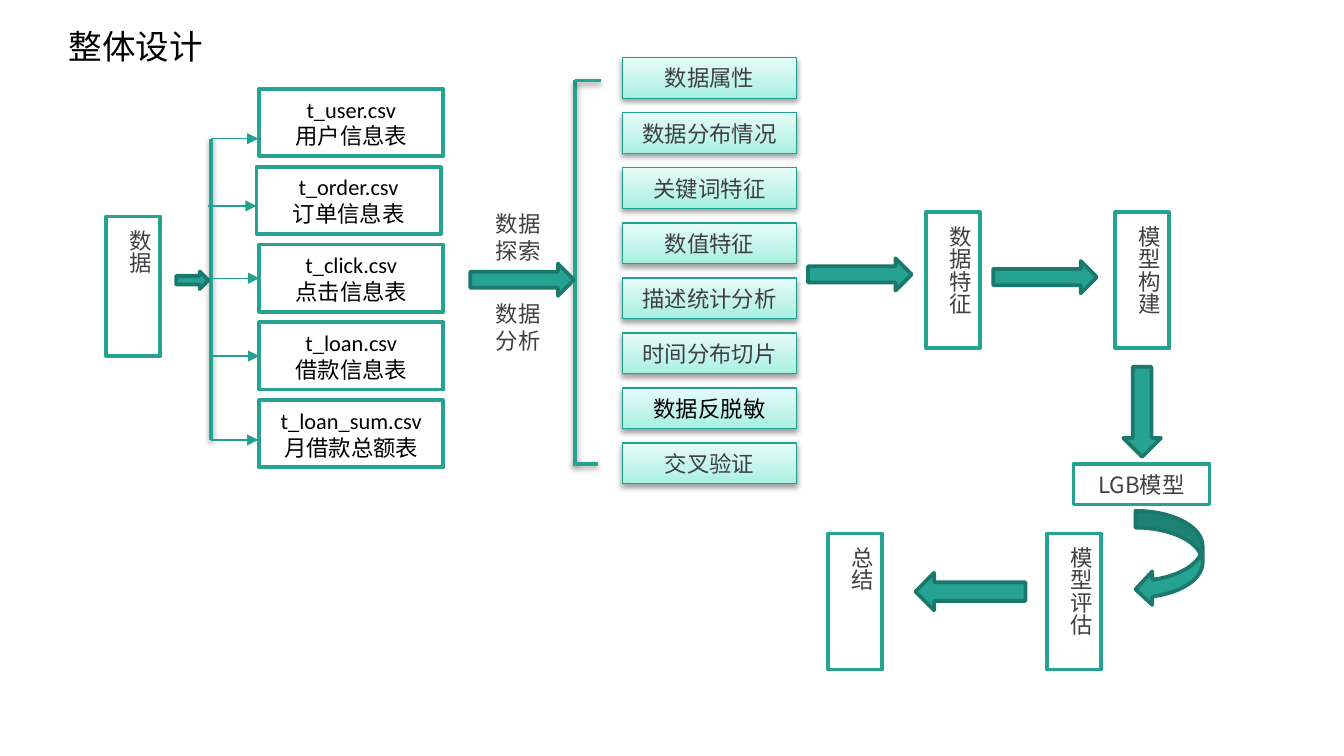
from typing import NamedTuple

from lxml import etree
from pptx import Presentation
from pptx.dml.color import RGBColor
from pptx.enum.shapes import MSO_CONNECTOR, MSO_SHAPE
from pptx.enum.text import MSO_ANCHOR, PP_ALIGN
from pptx.oxml.ns import qn
from pptx.util import Cm, Pt

RECT = MSO_SHAPE.RECTANGLE
RIGHT = MSO_SHAPE.RIGHT_ARROW
LEFT = MSO_SHAPE.LEFT_ARROW
DOWN = MSO_SHAPE.DOWN_ARROW
CURVE = MSO_SHAPE.CURVED_LEFT_ARROW
STRAIGHT = MSO_CONNECTOR.STRAIGHT
MIDDLE = MSO_ANCHOR.MIDDLE
TOP = MSO_ANCHOR.TOP
CENTER = PP_ALIGN.CENTER
START = PP_ALIGN.LEFT

HEX = {"white": "FFFFFF", "black": "000000", "gray": "404040",
       "teal": "25A292", "thin": "21A191", "dark": "1B786C"}
FADE = ((0, "A4F1E1"), (35, "C0F4E9"), (100, "E6FCF7"))
NOTO = "Noto Sans CJK SC"
CALIBRI = "Calibri"


class Box(NamedTuple):
    x: float
    y: float
    w: float
    h: float


class Arrow(NamedTuple):
    kind: MSO_SHAPE
    box: Box


class Step(NamedTuple):
    text: str
    box: Box


class Branch(NamedTuple):
    text: str
    left: float   # left side of the card
    start: float  # where the arrow leaves the spine
    end: float
    y: float


def color(name: str) -> RGBColor:
    return RGBColor.from_string(HEX[name])


def add(parent, tag: str, **attrs):
    return etree.SubElement(parent, qn(tag), attrs)


def shade(effects) -> None:
    """Soft shadow straight below."""
    drop = add(effects, "a:outerShdw", blurRad="40000", dist="20000",
               dir="5400000", rotWithShape="0")
    add(add(drop, "a:srgbClr", val=HEX["black"]), "a:alpha", val="38000")


def blend(shape) -> None:
    """Three-stop fill, lightest at the top."""
    shape.fill.gradient()
    grad = shape._element.spPr.find(qn("a:gradFill"))
    for child in list(grad):
        grad.remove(child)
    stops = add(grad, "a:gsLst")
    for pos, tone in FADE:
        add(add(stops, "a:gs", pos=str(pos * 1000)), "a:srgbClr", val=tone)
    add(grad, "a:lin", ang="16200000", scaled="0")


def write(shape, text: str, tone: str = "gray", font: str = NOTO,
          size: int = 12, align=CENTER, pitch: float = 0) -> None:
    frame = shape.text_frame
    frame.text = text
    frame.word_wrap = True
    frame.vertical_anchor = MIDDLE
    for para in frame.paragraphs:
        para.alignment = align
        if pitch:
            para.line_spacing = Pt(pitch)
        for run in para.runs:
            run.font.size = Pt(size)
            run.font.color.rgb = color(tone)
            run.font.name = font
            add(run._r.get_or_add_rPr(), "a:ea", typeface=NOTO)


def block(slide, kind, box: Box, fill: str = "white", line: str = "teal",
          width: float = 2):
    shape = slide.shapes.add_shape(kind, *map(Cm, box))
    shape.shadow.inherit = False
    shape.fill.solid()
    shape.fill.fore_color.rgb = color(fill)
    shape.line.color.rgb = color(line)
    shape.line.width = Pt(width)
    return shape


def stand(slide, step: Step) -> None:
    """Box whose text runs from top to bottom."""
    shape = block(slide, RECT, step.box)
    write(shape, step.text, align=START)
    frame = shape.text_frame
    frame.vertical_anchor = TOP
    frame.margin_top = Cm(0.25)
    frame.margin_right = Cm(0.13)
    frame._txBody.bodyPr.set("vert", "eaVert")


def chip(slide, text: str, box: Box, tone: str) -> None:
    shape = block(slide, RECT, box, line="thin", width=0.75)
    blend(shape)
    shade(shape._element.spPr.find(qn("a:effectLst")))
    write(shape, text, tone)


def rule(slide, x1: float, y1: float, x2: float, y2: float,
         head: bool = False):
    """Thick shadowed line, or a thin one with an arrowhead."""
    line = slide.shapes.add_connector(STRAIGHT, Cm(x1), Cm(y1), Cm(x2), Cm(y2))
    line.line.color.rgb = color("thin" if head else "teal")
    line.line.width = Pt(0.75 if head else 2)
    effects = add(line._element.spPr, "a:effectLst")
    if head:
        add(line.line._get_or_add_ln(), "a:tailEnd", type="triangle")
    else:
        shade(effects)
    return line


BRANCHES = (
    Branch("t_user.csv\n用户信息表", 4.9, 3.99, 4.88, 2.62),
    Branch("t_order.csv\n订单信息表", 4.85, 3.94, 4.85, 3.89),
    Branch("t_click.csv\n点击信息表", 4.9, 3.91, 4.83, 5.28),
    Branch("t_loan.csv\n借款信息表", 4.9, 4.01, 4.93, 6.76),
    Branch("t_loan_sum.csv月借款总额表", 4.9, 3.99, 4.88, 8.31),
)
CHIPS = ("数据属性", "数据分布情况", "关键词特征", "数值特征",
         "描述统计分析", "时间分布切片", "数据反脱敏", "交叉验证")
STEPS = (
    Step("数据", Box(2.01, 4.09, 1.02, 2.64)),
    Step("数据特征", Box(17.5, 4.01, 1.02, 2.57)),
    Step("模型构建", Box(21.08, 4.01, 1.02, 2.57)),
    Step("模型评估", Box(19.79, 10.08, 1.02, 2.57)),
    Step("总结", Box(15.65, 10.08, 1.02, 2.57)),
)
ARROWS = (
    Arrow(RIGHT, Box(3.33, 5.13, 0.61, 0.33)),
    Arrow(RIGHT, Box(8.89, 4.98, 1.96, 0.61)),
    Arrow(RIGHT, Box(15.27, 4.88, 1.96, 0.61)),
    Arrow(RIGHT, Box(18.77, 4.93, 1.96, 0.61)),
    Arrow(DOWN, Box(21.23, 6.93, 0.71, 1.7)),
    Arrow(CURVE, Box(21.46, 9.65, 1.27, 1.8)),
    Arrow(LEFT, Box(17.3, 10.82, 2.08, 0.71)),
)


def main() -> None:
    deck = Presentation()
    deck.slide_width, deck.slide_height = Cm(25.4), Cm(14.28)
    slide = deck.slides.add_slide(deck.slide_layouts[5])

    # Title
    title = slide.shapes.title
    title.left, title.top, title.width, title.height = map(
        Cm, (1.3, 0.33, 5.92, 1.07))
    write(title, "整体设计", "black", size=18, align=START)
    title.text_frame.margin_left = title.text_frame.margin_right = 0

    # Source tables and the spine that feeds them
    rule(slide, 3.99, 2.62, 3.99, 8.31)
    high = 1.27
    for i, item in enumerate(BRANCHES):
        top = 1.68 + 1.47 * i
        card = block(slide, RECT, Box(item.left, top, 3.48, high))
        write(card, item.text, "black", CALIBRI, pitch=14.4)
        mid = top + high / 2
        join = abs(item.y - mid) < 0.1
        y = mid if join else item.y
        line = rule(slide, item.start, y, item.end, y, head=True)
        if join:
            line.end_connect(card, 1)

    # Labels around the exploration arrow
    for text, top in (("数据探索", 3.84), ("数据分析", 5.54)):
        label = slide.shapes.add_textbox(Cm(9.12), Cm(top), Cm(1.47), Cm(1.27))
        write(label, text, align=START, pitch=14.4)

    # Bracket and analysis topics
    rule(slide, 10.87, 1.52, 10.87, 8.76)
    rule(slide, 10.87, 1.52, 11.35, 1.52)
    rule(slide, 10.82, 8.76, 11.3, 8.76)
    for i, text in enumerate(CHIPS):
        tone = "black" if text == "数据反脱敏" else "gray"
        chip(slide, text, Box(11.76, 1.09 + 1.04 * i, 3.3, 0.77), tone)

    # Process steps and block arrows
    for step in STEPS:
        stand(slide, step)
    write(block(slide, RECT, Box(20.29, 8.76, 2.57, 0.77)), "LGB模型")
    for arrow in ARROWS:
        block(slide, arrow.kind, arrow.box, "teal", "dark")

    deck.save("out.pptx")


if __name__ == "__main__":
    main()
